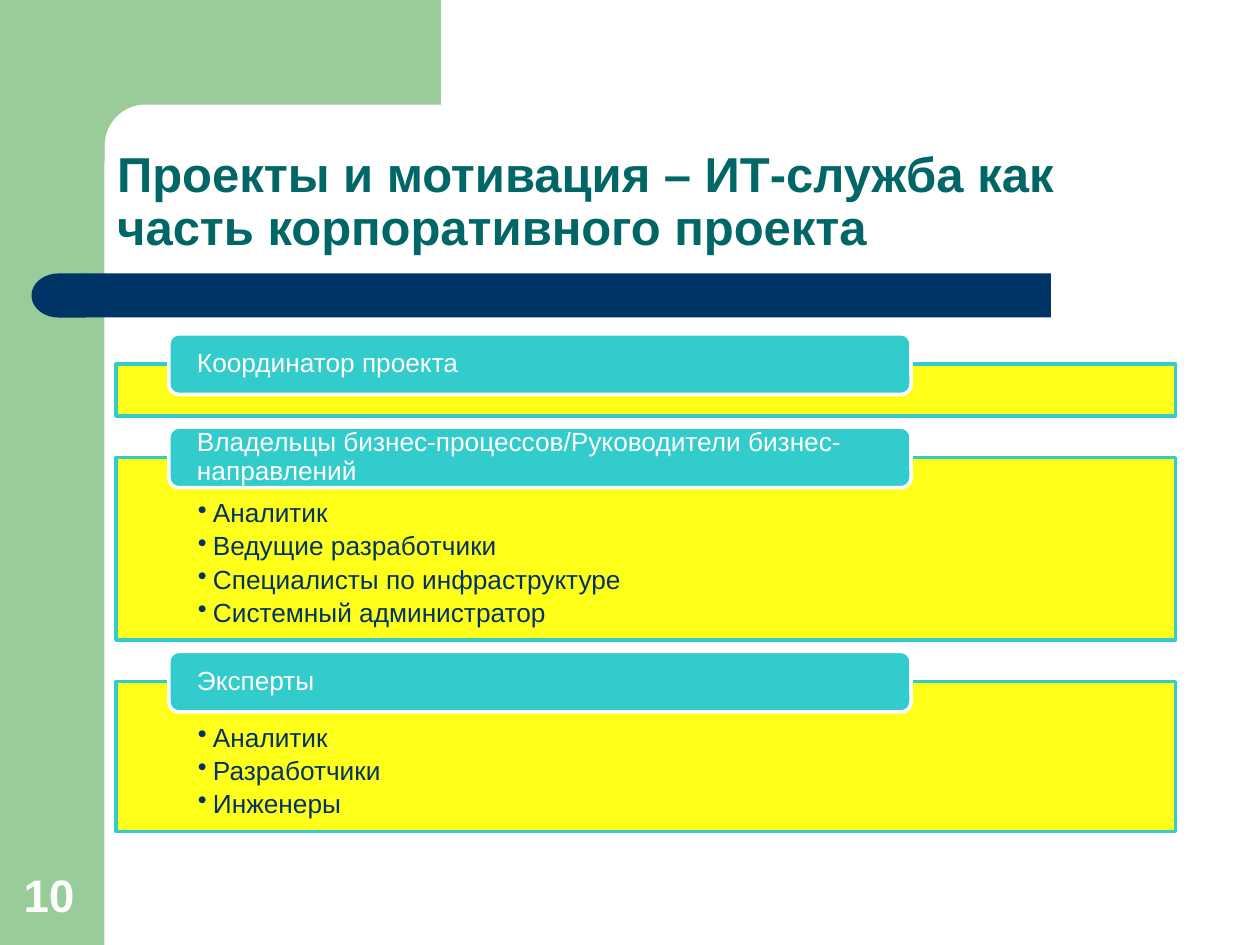
from dataclasses import dataclass
from math import cos, pi, sin

from lxml.etree import SubElement
from pptx import Presentation
from pptx.dml.color import RGBColor
from pptx.enum.shapes import MSO_SHAPE
from pptx.enum.text import MSO_ANCHOR, MSO_AUTO_SIZE, PP_ALIGN
from pptx.oxml.ns import qn
from pptx.util import Inches, Pt

GREEN = RGBColor(0x99, 0xCC, 0x99)
NAVY = RGBColor(0x00, 0x33, 0x66)
TEAL = RGBColor(0x00, 0x66, 0x66)
CYAN = RGBColor(0x33, 0xCC, 0xCC)
YELLOW = RGBColor(0xFF, 0xFF, 0x00)
WHITE = RGBColor(0xFF, 0xFF, 0xFF)


@dataclass
class Group:
    top: float
    height: float
    head: str
    roles: tuple[str, ...] = ()


GROUPS = [
    Group(2.89, 0.41, "Координатор проекта"),
    Group(3.63, 1.45, "Владельцы бизнес-процессов/Руководители бизнес-направлений",
          ("Аналитик", "Ведущие разработчики", "Специалисты по инфраструктуре",
           "Системный администратор")),
    Group(5.41, 1.19, "Эксперты", ("Аналитик", "Разработчики", "Инженеры")),
]


def paint(shape, fill: RGBColor, line: RGBColor | None = None) -> None:
    shape.shadow.inherit = False
    shape.fill.solid()
    shape.fill.fore_color.rgb = fill
    if line is None:
        shape.line.fill.background()
    else:
        shape.line.color.rgb = line
        shape.line.width = Pt(2)


def add_box(slide, kind, left: float, top: float, width: float, height: float,
            fill: RGBColor, line: RGBColor | None = None):
    shape = slide.shapes.add_shape(
        kind, Inches(left), Inches(top), Inches(width), Inches(height))
    paint(shape, fill, line)
    return shape


def set_frame(frame, anchor, side: float = 0.1, top: float = 0.05,
              base: float = 0.05) -> None:
    frame.word_wrap = True
    frame.auto_size = MSO_AUTO_SIZE.NONE
    frame.vertical_anchor = anchor
    frame.margin_left = frame.margin_right = Inches(side)
    frame.margin_top, frame.margin_bottom = Inches(top), Inches(base)


def add_run(para, text: str, size: int, color: RGBColor, bold: bool = False) -> None:
    para.alignment = PP_ALIGN.LEFT
    run = para.add_run()
    run.text = text
    run.font.name = "Arial"
    run.font.size = Pt(size)
    run.font.bold = bold
    run.font.color.rgb = color


def add_bullet(para) -> None:
    props = para._p.get_or_add_pPr()
    props.set("marL", str(Inches(0.12)))
    props.set("indent", str(-Inches(0.12)))
    SubElement(props, qn("a:buChar")).set("char", "•")


def draw_frame(slide) -> None:
    # Green side band and corner block with a rounded inner edge
    add_box(slide, MSO_SHAPE.RECTANGLE, 0, 0, 0.83, 7.5, GREEN)
    steps = 16
    arc = [(1.15 - 0.32 * sin(pi / 2 * i / steps), 1.16 - 0.33 * cos(pi / 2 * i / steps))
           for i in range(steps + 1)]
    points = [(3.5, 0.83), *arc, (0.83, 1.28), (0.5, 1.28), (0.5, 0)]
    path = slide.shapes.build_freeform(Inches(3.5), 0)
    path.add_line_segments([(Inches(x), Inches(y)) for x, y in points], close=True)
    paint(path.convert_to_shape(), GREEN)

    # Navy bar with a round left end
    add_box(slide, MSO_SHAPE.RECTANGLE, 0.67, 2.17, 7.67, 0.35, NAVY)
    cap = add_box(slide, MSO_SHAPE.FLOWCHART_DELAY, 0.25, 2.17, 0.43, 0.35, NAVY)
    cap.rotation = 180


def draw_title(slide, text: str) -> None:
    title = slide.shapes.title
    title.left, title.top = Inches(0.83), Inches(0.83)
    title.width, title.height = Inches(8.67), Inches(1.25)
    set_frame(title.text_frame, MSO_ANCHOR.BOTTOM)
    para = title.text_frame.paragraphs[0]
    para.line_spacing = 0.9
    add_run(para, text, 28, TEAL, True)


def draw_group(slide, group: Group) -> None:
    # Yellow panel with its roles
    panel = add_box(slide, MSO_SHAPE.RECTANGLE, 0.92, group.top, 8.41, group.height,
                    YELLOW, CYAN)
    tint = panel.fill._xPr.find(qn("a:solidFill"))[0]
    SubElement(tint, qn("a:alpha")).set("val", "90000")
    frame = panel.text_frame
    set_frame(frame, MSO_ANCHOR.TOP, 0.65, 0.34, 0.12)
    for i, role in enumerate(group.roles):
        para = frame.add_paragraph() if i else frame.paragraphs[0]
        para.line_spacing = 0.9
        para.space_after = Pt(2.7)
        add_bullet(para)
        add_run(para, role, 15, NAVY)

    # Heading over the top edge of the panel
    head = add_box(slide, MSO_SHAPE.ROUNDED_RECTANGLE, 1.34, group.top - 0.24, 5.89, 0.48,
                   CYAN, WHITE)
    set_frame(head.text_frame, MSO_ANCHOR.MIDDLE, 0.2, 0, 0)
    para = head.text_frame.paragraphs[0]
    para.line_spacing = 0.9
    add_run(para, group.head, 15, WHITE)


def draw_number(slide, text: str) -> None:
    box = slide.shapes.add_textbox(Inches(0.09), Inches(6.83), Inches(0.64), Inches(0.53))
    set_frame(box.text_frame, MSO_ANCHOR.BOTTOM)
    add_run(box.text_frame.paragraphs[0], text, 26, WHITE, True)


def main() -> None:
    deck = Presentation()
    deck.slide_width, deck.slide_height = Inches(10), Inches(7.5)
    slide = deck.slides.add_slide(deck.slide_layouts[5])
    draw_frame(slide)
    draw_title(slide, "Проекты и мотивация – ИТ-служба как часть корпоративного проекта")
    for group in GROUPS:
        draw_group(slide, group)
    draw_number(slide, "10")
    deck.save("out.pptx")


if __name__ == "__main__":
    main()
